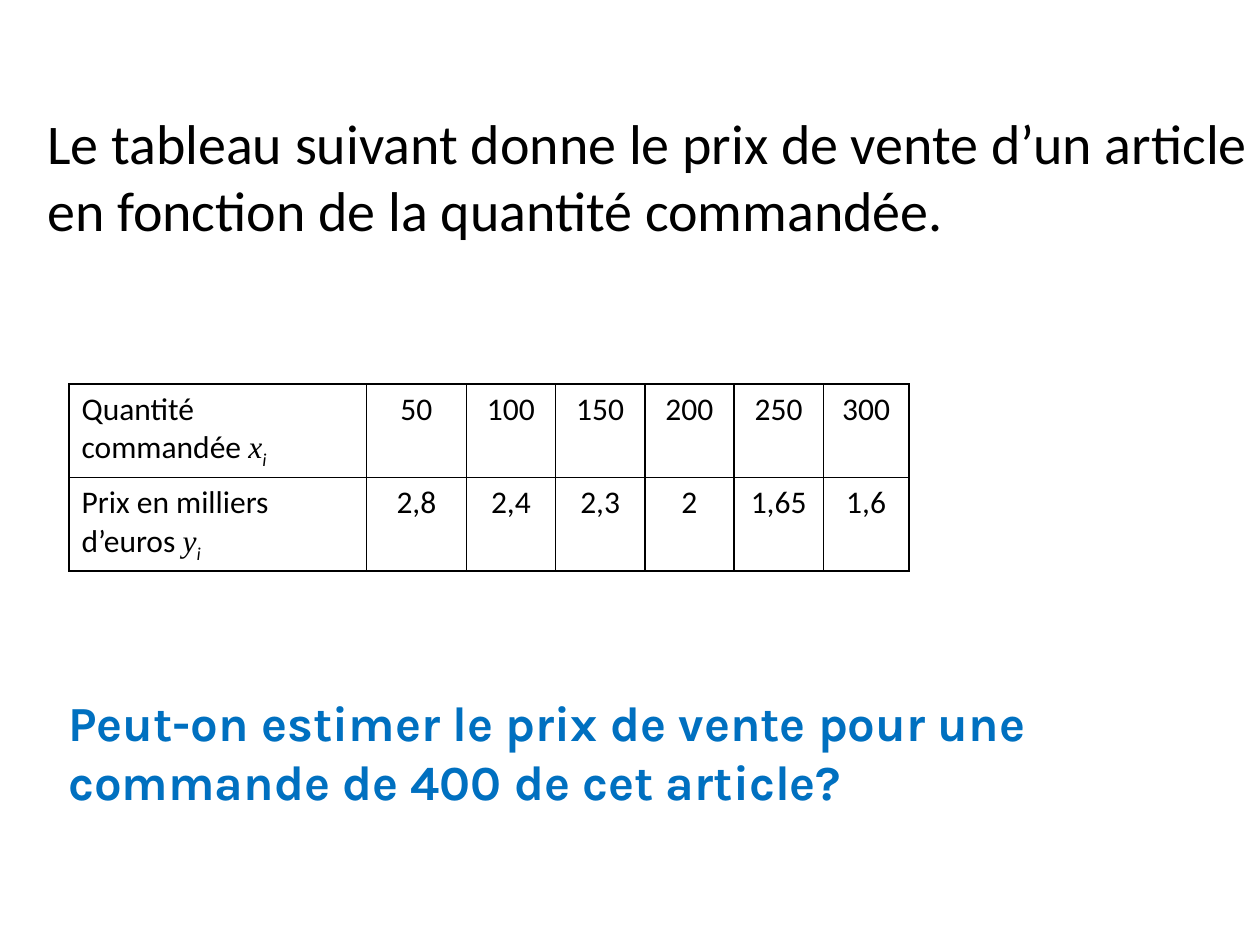
import pptx
import pptx.util
import pptx.dml.color
import pptx.enum.text
import pptx.oxml
import pptx.oxml.ns

Pt = pptx.util.Pt
ALIGN = pptx.enum.text.PP_ALIGN
COLORS = {"ink": "000000", "blue": "0070C0"}
WIDTHS = [170, 57, 51, 51, 51, 51, 49]
ROWS = [
    (("Quantité commandée ", "x"), ["50", "100", "150", "200", "250", "300"]),
    (("Prix en milliers d’euros ", "y"), ["2,8", "2,4", "2,3", "2", "1,65", "1,6"]),
]


def write(para, text, size=18, font="Calibri", color="ink", bold=False,
          slant=False, base=0):
    run = para.add_run()
    run.text = text
    face = run.font
    face.size, face.name = Pt(size), font
    face.bold, face.italic = bold, slant
    face.color.rgb = pptx.dml.color.RGBColor.from_string(COLORS[color])
    if base:
        run._r.get_or_add_rPr().set("baseline", str(base * 1000))


def add_text(slide, box, text, pad=(0, 0), indent=0, before=0, **style):
    frame = slide.shapes.add_textbox(*map(Pt, box)).text_frame
    frame.word_wrap = True
    frame.margin_left = frame.margin_right = Pt(pad[0])
    frame.margin_top = frame.margin_bottom = Pt(pad[1])
    para = frame.paragraphs[0]
    para.space_before = Pt(before)
    if indent:
        props = para._p.get_or_add_pPr()
        props.set("marL", str(Pt(indent)))
        props.set("indent", "0")
    write(para, text, **style)


def frame_cell(cell):
    cell.fill.background()
    props = cell._tc.get_or_add_tcPr()
    for spot, side in enumerate(("lnL", "lnR", "lnT", "lnB")):
        line = pptx.oxml.parse_xml(
            f'<a:{side} {pptx.oxml.ns.nsdecls("a")} w="{Pt(0.96)}"><a:solidFill>'
            f'<a:srgbClr val="{COLORS["ink"]}"/></a:solidFill></a:{side}>')
        props.insert(spot, line)


def add_grid(slide, left, top, high):
    shape = slide.shapes.add_table(len(ROWS), len(WIDTHS), Pt(left), Pt(top),
                                   Pt(sum(WIDTHS)), Pt(high * len(ROWS)))
    grid = shape.table
    grid.first_row = grid.horz_banding = False
    for col, width in zip(grid.columns, WIDTHS):
        col.width = Pt(width)
    for r, ((label, sign), values) in enumerate(ROWS):
        grid.rows[r].height = Pt(high)
        head = grid.cell(r, 0).text_frame.paragraphs[0]
        write(head, label)
        write(head, sign, font="Times New Roman", slant=True)
        write(head, "i", slant=True, base=-25)
        for c, value in enumerate(values, 1):
            para = grid.cell(r, c).text_frame.paragraphs[0]
            para.alignment = ALIGN.CENTER
            write(para, value)
    for cell in grid.iter_cells():
        frame_cell(cell)


def main():
    deck = pptx.Presentation()
    deck.slide_width, deck.slide_height = Pt(720), Pt(540)
    slide = deck.slides.add_slide(deck.slide_layouts[6])
    add_text(slide, (0, 62, 720, 168.5),
             "Le tableau suivant donne le prix de vente d’un article "
             "en fonction de la quantité commandée.",
             indent=27, before=6.4, size=32)
    add_grid(slide, 39.5, 219.5, 50.4)
    add_text(slide, (32, 392, 578, 108),
             "Peut-on estimer le prix de vente pour une commande "
             "de 400 de cet article?",
             pad=(7.2, 3.6), size=28, font="Karla", color="blue", bold=True)
    deck.save("out.pptx")


if __name__ == "__main__":
    main()
